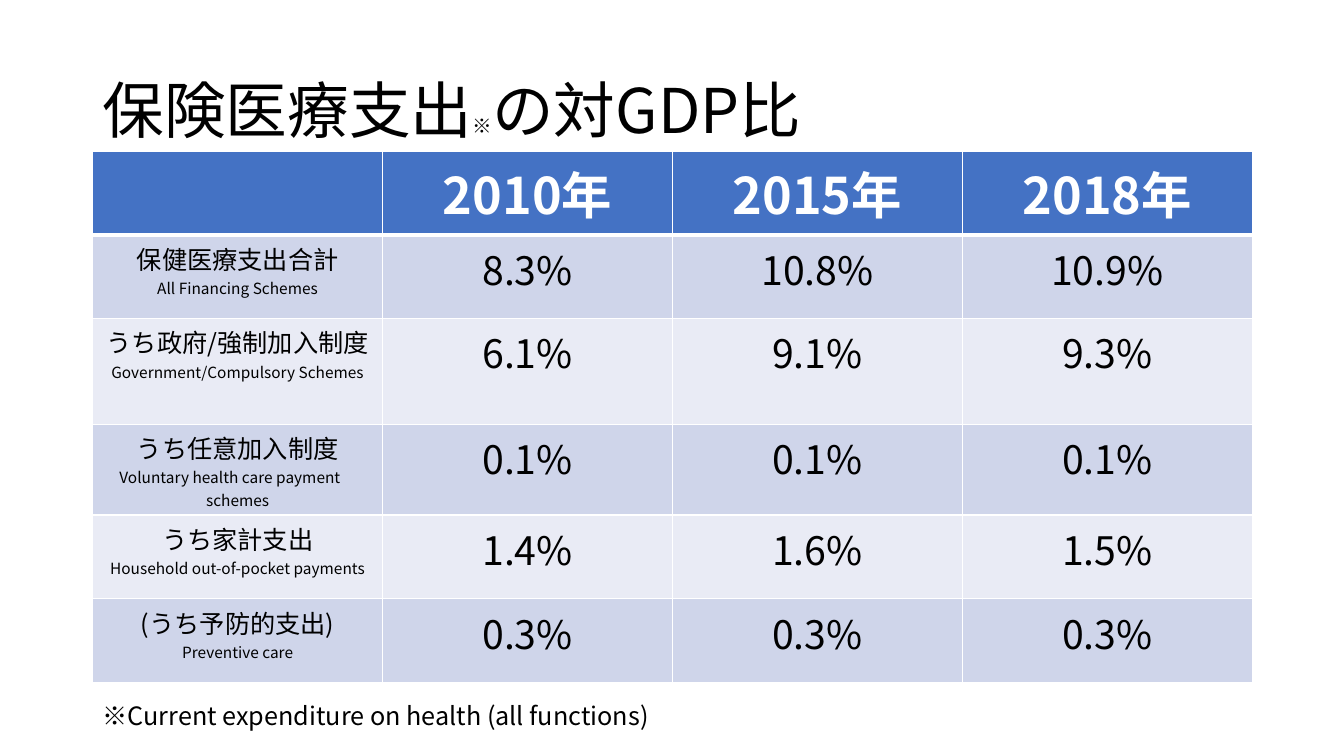
from lxml.etree import SubElement
from pptx import Presentation
from pptx.dml.color import RGBColor as Color
from pptx.enum.text import MSO_ANCHOR as Anchor, PP_ALIGN as Align
from pptx.oxml.ns import qn
from pptx.util import Pt

TITLE = [("保険医療支出", 44), ("※", 14), ("の対GDP比", 44)]
YEARS = ["2010年", "2015年", "2018年"]
SCHEMES = [
    ("保健医療支出合計", "All Financing Schemes", ["8.3%", "10.8%", "10.9%"]),
    ("うち政府/強制加入制度", "Government/Compulsory Schemes", ["6.1%", "9.1%", "9.3%"]),
    ("うち任意加入制度", "Voluntary health care payment　schemes", ["0.1%", "0.1%", "0.1%"]),
    ("うち家計支出", "Household out-of-pocket payments", ["1.4%", "1.6%", "1.5%"]),
    ("(うち予防的支出)", "Preventive care", ["0.3%", "0.3%", "0.3%"]),
]
FOOTNOTE = "※Current expenditure on health (all functions)"

FONT = "Noto Sans CJK JP"
COLORS = {
    "text": "000000",
    "white": "FFFFFF",
    "header": "4472C4",
    "odd": "CFD5EA",
    "even": "E9EBF5",
}
PX = 9144
LEFT, WIDTH, TABLE_TOP = 92, 1150, 150
ROW_HEIGHTS = [83, 83, 105, 90, 83, 83]


def px(*lengths):
    return [length * PX for length in lengths]


def color(name):
    return Color.from_string(COLORS[name])


def add_span(para, text, size, ink="text", bold=False):
    span = para.add_run()
    span.text = text
    span.font.size = Pt(size)
    span.font.bold = bold
    span.font.name = FONT
    span.font.color.rgb = color(ink)
    SubElement(span._r.get_or_add_rPr(), qn("a:ea"), typeface=FONT)


def add_text_box(page, spans, place, anchor=Anchor.TOP, spacing=None):
    frame = page.shapes.add_textbox(*px(*place)).text_frame
    frame.word_wrap = True
    frame.vertical_anchor = anchor
    para = frame.paragraphs[0]
    para.line_spacing = spacing
    for text, size in spans:
        add_span(para, text, size)


def set_borders(cell, widths):
    properties = cell._tc.get_or_add_tcPr()
    for position, (side, width) in enumerate(widths.items()):
        line = SubElement(properties, qn(f"a:ln{side}"), w=str(Pt(width)))
        fill = SubElement(line, qn("a:solidFill"))
        SubElement(fill, qn("a:srgbClr"), val=COLORS["white"])
        properties.insert(position, line)


def fill_cell(cell, lines, fill, top=1, bottom=1, **style):
    cell.fill.solid()
    cell.fill.fore_color.rgb = color(fill)
    set_borders(cell, {"L": 1, "R": 1, "T": top, "B": bottom})
    frame = cell.text_frame
    for index, (text, size) in enumerate(lines):
        para = frame.add_paragraph() if index else frame.paragraphs[0]
        para.alignment = Align.CENTER
        add_span(para, text, size, **style)


def add_spending_table(page):
    place = (LEFT, TABLE_TOP, WIDTH, sum(ROW_HEIGHTS))
    table = page.shapes.add_table(len(SCHEMES) + 1, len(YEARS) + 1, *px(*place)).table
    for row, height in zip(table.rows, px(*ROW_HEIGHTS)):
        row.height = height

    fill_cell(table.cell(0, 0), [], "header", bottom=3)
    for column, year in enumerate(YEARS, 1):
        fill_cell(table.cell(0, column), [(year, 36)], "header", bottom=3, ink="white", bold=True)

    for row, (japanese, english, shares) in enumerate(SCHEMES, 1):
        contents = [[(japanese, 18), (english, 11)]] + [[(share, 28)] for share in shares]
        for column, lines in enumerate(contents):
            fill_cell(
                table.cell(row, column),
                lines,
                "odd" if row % 2 else "even",
                top=3 if row == 1 else 1,
            )


def main():
    deck = Presentation()
    deck.slide_width, deck.slide_height = px(1333, 750)
    page = deck.slides.add_slide(deck.slide_layouts[6])
    add_text_box(page, TITLE, (LEFT, 40, WIDTH, 145), anchor=Anchor.MIDDLE, spacing=0.9)
    add_spending_table(page)
    add_text_box(page, [(FOOTNOTE, 18)], (LEFT, 690, 826, 40))
    deck.save("out.pptx")


if __name__ == "__main__":
    main()
